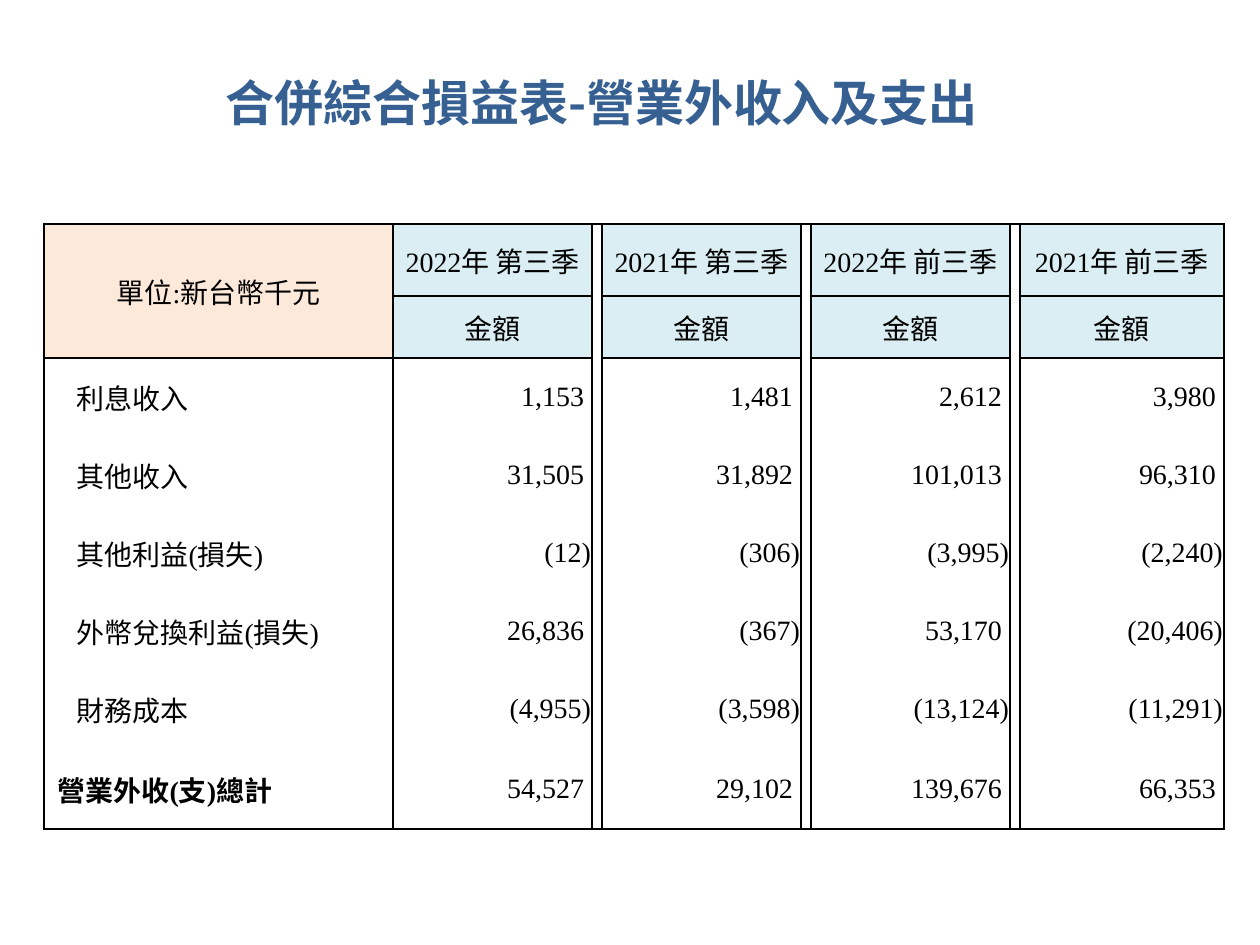
from lxml.etree import SubElement
from pptx import Presentation
from pptx.dml.color import RGBColor
from pptx.enum.text import MSO_ANCHOR, MSO_AUTO_SIZE, PP_ALIGN
from pptx.oxml.ns import qn
from pptx.util import Emu, Pt

COLORS = {"title": "376092", "text": "000000", "line": "000000",
          "unit": "FDE9D9", "head": "DBEEF3", "body": "FFFFFF"}
SANS, SERIF = "Noto Sans CJK SC", "Times New Roman"

PERIODS = ["2022年 第三季", "2021年 第三季", "2022年 前三季", "2021年 前三季"]
ITEMS = [
    ("利息收入", [1153, 1481, 2612, 3980]),
    ("其他收入", [31505, 31892, 101013, 96310]),
    ("其他利益(損失)", [-12, -306, -3995, -2240]),
    ("外幣兌換利益(損失)", [26836, -367, 53170, -20406]),
    ("財務成本", [-4955, -3598, -13124, -11291]),
    ("營業外收(支)總計", [54527, 29102, 139676, 66353]),
]
WIDTHS = [349, 199, 10, 199, 10, 199, 10, 204]
HEIGHTS = [72, 62] + [78] * 5 + [81]
LAST = len(HEIGHTS) - 1


def px(n):
    return Emu(round(n * 914400 / 126))


def add_run(para, text, size, face, color, bold=False):
    run = para.add_run()
    run.text = text
    font = run.font
    font.size, font.name, font.bold = Pt(size), face, bold
    font.color.rgb = RGBColor.from_string(COLORS[color])
    return run


def set_edges(cell, edges):
    """Draw the named edges (any of L, R, T, B) and clear the others."""
    props = cell._tc.get_or_add_tcPr()
    for spot, side in enumerate("LRTB"):
        line = SubElement(props, qn(f"a:ln{side}"), w=str(Pt(1)))
        if side in edges:
            fill = SubElement(line, qn("a:solidFill"))
            SubElement(fill, qn("a:srgbClr"), val=COLORS["line"])
        else:
            SubElement(line, qn("a:noFill"))
        props.insert(spot, line)


def fill_cell(cell, text, fill, edges, align=PP_ALIGN.CENTER,
              left=1, right=1, bold=False):
    cell.fill.solid()
    cell.fill.fore_color.rgb = RGBColor.from_string(COLORS[fill])
    set_edges(cell, edges)
    cell.vertical_anchor = MSO_ANCHOR.MIDDLE
    cell.margin_left, cell.margin_right = px(left), px(right)
    cell.margin_top, cell.margin_bottom = px(1), 0
    para = cell.text_frame.paragraphs[0]
    para.alignment = align
    if text:
        add_run(para, text, 16, SERIF, "text", bold)


def money(value):
    return f"({-value:,})" if value < 0 else f"{value:,}"


def add_title(slide, x, y, w, h):
    title = slide.shapes.title
    title.left, title.top, title.width, title.height = map(px, (x, y, w, h))
    frame = title.text_frame
    frame.word_wrap = True
    frame.auto_size = MSO_AUTO_SIZE.SHAPE_TO_FIT_TEXT
    frame.vertical_anchor = MSO_ANCHOR.TOP
    para = frame.paragraphs[0]
    para.alignment = PP_ALIGN.LEFT
    run = add_run(para, "合併綜合損益表-營業外收入及支出", 28, SANS, "title", True)
    SubElement(run.font._element, qn("a:ea"), typeface=SANS)


def add_income(slide, x, y):
    """Place the income table, with narrow gap columns between periods."""
    frame = slide.shapes.add_table(len(HEIGHTS), len(WIDTHS), px(x), px(y),
                                   px(sum(WIDTHS)), px(sum(HEIGHTS)))
    table = frame.table
    table.first_row = table.horz_banding = False
    for col, width in zip(table.columns, WIDTHS):
        col.width = px(width)
    for row, height in zip(table.rows, HEIGHTS):
        row.height = px(height)

    table.cell(0, 0).merge(table.cell(1, 0))
    for row in (0, 1):
        fill_cell(table.cell(row, 0), "" if row else "單位:新台幣千元", "unit", "LRTB")
    for i, period in enumerate(PERIODS):
        col = 2 * i + 1
        fill_cell(table.cell(0, col), period, "head", "LRTB")
        fill_cell(table.cell(1, col), "金額", "head", "LRTB")

    for row, (name, values) in enumerate(ITEMS, 2):
        total = row == LAST
        edges = "LR" + "T" * (row == 2) + "B" * total
        fill_cell(table.cell(row, 0), name, "body", edges, PP_ALIGN.LEFT,
                  left=14 if total else 33, bold=total)
        for i, value in enumerate(values):
            fill_cell(table.cell(row, 2 * i + 1), money(value), "body", edges,
                      PP_ALIGN.RIGHT, right=1 if value < 0 else 8)

    for col in range(2, len(WIDTHS), 2):
        for row in range(len(HEIGHTS)):
            edges = "LR" + "T" * (row == 0) + "B" * (row == LAST)
            fill_cell(table.cell(row, col), "", "body", edges)


def main():
    deck = Presentation()
    deck.slide_width, deck.slide_height = px(1260), px(945)
    slide = deck.slides.add_slide(deck.slide_layouts[5])
    add_title(slide, 213, 66, 1022, 72)
    add_income(slide, 44, 224)
    deck.save("out.pptx")


if __name__ == "__main__":
    main()
